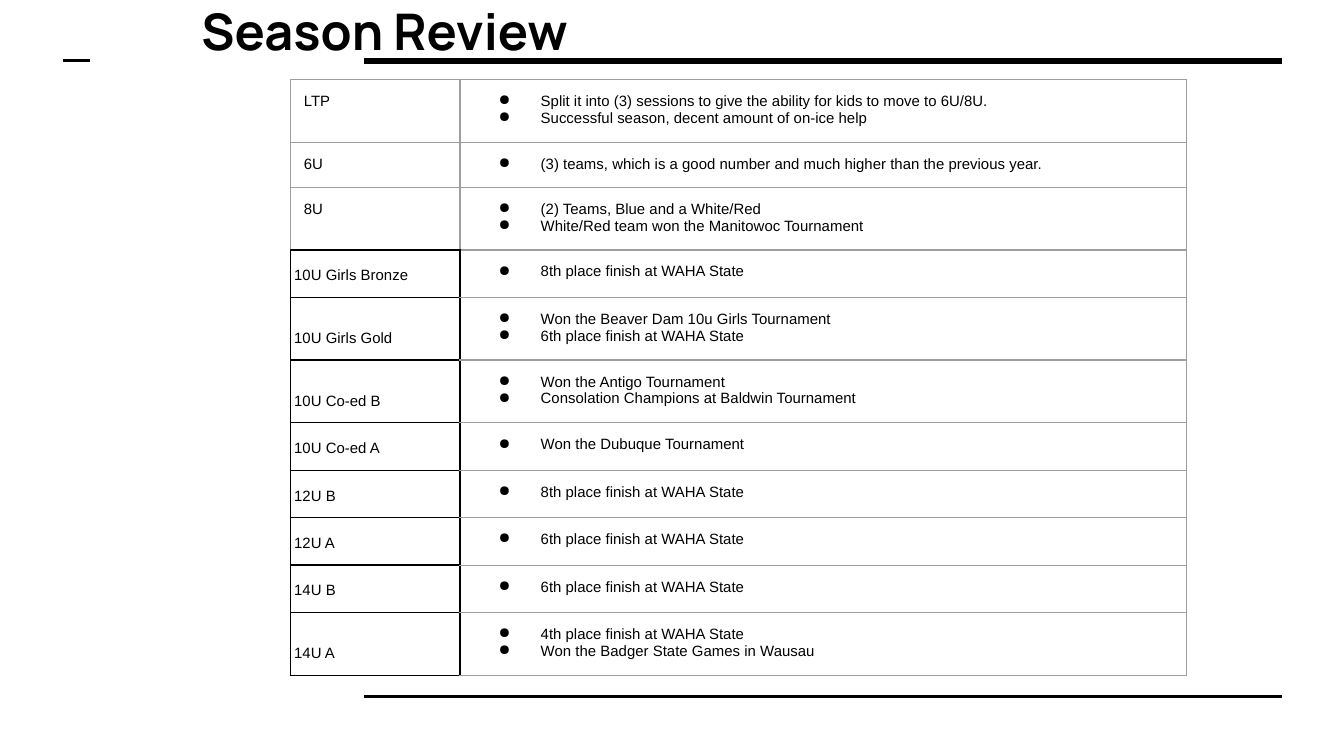
from lxml import etree
from pptx import Presentation
from pptx.dml.color import RGBColor
from pptx.enum import shapes, text
from pptx.oxml import ns
from pptx.util import Pt

BLACK = RGBColor(0x00, 0x00, 0x00)
GREY = RGBColor(0x9E, 0x9E, 0x9E)
THIN_GREY = (GREY, 0.75)
THIN_BLACK = (BLACK, 0.83)

INSET = 7.2
COLUMN_WIDTHS = (90.9, 389.3)
SINGLE_ROW, DOUBLE_ROW = 23.6, 32.8
FIRST_BOXED_ROW = 3

SEASON = [
    ("LTP", ["Split it into (3) sessions to give the ability for kids to move to 6U/8U.",
             "Successful season, decent amount of on-ice help"]),
    ("6U", ["(3) teams, which is a good number and much higher than the previous year."]),
    ("8U", ["(2) Teams, Blue and a White/Red",
            "White/Red team won the Manitowoc Tournament"]),
    ("10U Girls Bronze", ["8th place finish at WAHA State"]),
    ("10U Girls Gold", ["Won the Beaver Dam 10u Girls Tournament",
                        "6th place finish at WAHA State"]),
    ("10U Co-ed B", ["Won the Antigo Tournament",
                     "Consolation Champions at Baldwin Tournament"]),
    ("10U Co-ed A", ["Won the Dubuque Tournament"]),
    ("12U B", ["8th place finish at WAHA State"]),
    ("12U A", ["6th place finish at WAHA State"]),
    ("14U B", ["6th place finish at WAHA State"]),
    ("14U A", ["4th place finish at WAHA State",
               "Won the Badger State Games in Wausau"]),
]


def add_child(parent, tag, **attributes):
    child = etree.SubElement(parent, ns.qn(tag))
    for name, value in attributes.items():
        child.set(name, str(value))
    return child


def add_colour(parent, colour):
    add_child(add_child(parent, "a:solidFill"), "a:srgbClr", val=colour)


def add_bullet(paragraph):
    properties = paragraph._p.get_or_add_pPr()
    properties.set("marL", str(Pt(36)))
    properties.set("indent", str(Pt(-22.5)))
    add_child(add_child(properties, "a:buClr"), "a:srgbClr", val=BLACK)
    add_child(properties, "a:buChar", char="●")


def write(frame, lines, size=8, font="Arial", bold=False, bullets=False, spacing=None):
    for index, line in enumerate(lines):
        paragraph = frame.add_paragraph() if index else frame.paragraphs[0]
        if bullets:
            add_bullet(paragraph)
        if spacing:
            paragraph.line_spacing = spacing
        run = paragraph.add_run()
        run.text = line
        run.font.size, run.font.name, run.font.bold = Pt(size), font, bold
        run.font.color.rgb = BLACK


def set_margins(target, side):
    target.margin_left = target.margin_right = Pt(side)
    target.margin_top = target.margin_bottom = Pt(INSET)


def set_borders(cell, left, right, top, bottom):
    """Draw the four sides, each given as (colour, width), and clear the fill."""
    properties = cell._tc.get_or_add_tcPr()
    for side, (colour, width) in zip("LRTB", (left, right, top, bottom)):
        add_colour(add_child(properties, f"a:ln{side}", w=Pt(width)), colour)
    cell.fill.background()


def add_rule(slide, left, top, width, weight):
    rule = slide.shapes.add_connector(
        shapes.MSO_CONNECTOR.STRAIGHT, Pt(left), Pt(top), Pt(left + width), Pt(top))
    rule.line.color.rgb = BLACK
    rule.line.width = Pt(weight)
    add_child(rule._element.spPr, "a:effectLst")


def add_frame_rules(slide, left, top, width, height):
    body_left = left + 161.3
    body_width = width - 161.3
    add_rule(slide, body_left, top, body_width, 3)
    add_rule(slide, body_left, top + height, body_width, 1.5)
    add_rule(slide, left, top, 14.4, 1.5)


def add_title(slide, left, top, width, height):
    frame = slide.shapes.add_textbox(Pt(left), Pt(top), Pt(width), Pt(height)).text_frame
    frame.word_wrap = True
    set_margins(frame, INSET)
    write(frame, ["Season Review"], size=27, font="Manrope", bold=True)


def add_season_table(slide, left, top):
    heights = [DOUBLE_ROW if len(results) > 1 else SINGLE_ROW for _, results in SEASON]
    table = slide.shapes.add_table(
        len(SEASON), 2, Pt(left), Pt(top), Pt(sum(COLUMN_WIDTHS)), Pt(sum(heights))).table
    table.first_row = table.horz_banding = False
    for column, width in zip(table.columns, COLUMN_WIDTHS):
        column.width = Pt(width)

    for index, (team, results) in enumerate(SEASON):
        table.rows[index].height = Pt(heights[index])
        team_cell, results_cell = table.cell(index, 0), table.cell(index, 1)
        boxed = index >= FIRST_BOXED_ROW
        edge = THIN_BLACK if boxed else THIN_GREY
        bottom = THIN_BLACK if index >= FIRST_BOXED_ROW - 1 else THIN_GREY

        set_margins(team_cell, 2 if boxed else INSET)
        team_cell.vertical_anchor = (
            text.MSO_ANCHOR.BOTTOM if boxed else text.MSO_ANCHOR.TOP)
        write(team_cell.text_frame, [team], spacing=1.15 if boxed else None)
        set_borders(team_cell, edge, edge, edge, bottom)

        set_margins(results_cell, INSET)
        write(results_cell.text_frame, results, bullets=True)
        set_borders(results_cell, edge, THIN_GREY, THIN_GREY, THIN_GREY)


def main():
    presentation = Presentation()
    presentation.slide_width, presentation.slide_height = Pt(720), Pt(405)
    slide = presentation.slides.add_slide(presentation.slide_layouts[6])
    add_frame_rules(slide, 33.6, 32.6, 653.2, 340.4)
    add_title(slide, 100.8, -7.2, 497.5, 49.7)
    add_season_table(slide, 155.6, 42.7)
    presentation.save("out.pptx")


if __name__ == "__main__":
    main()
